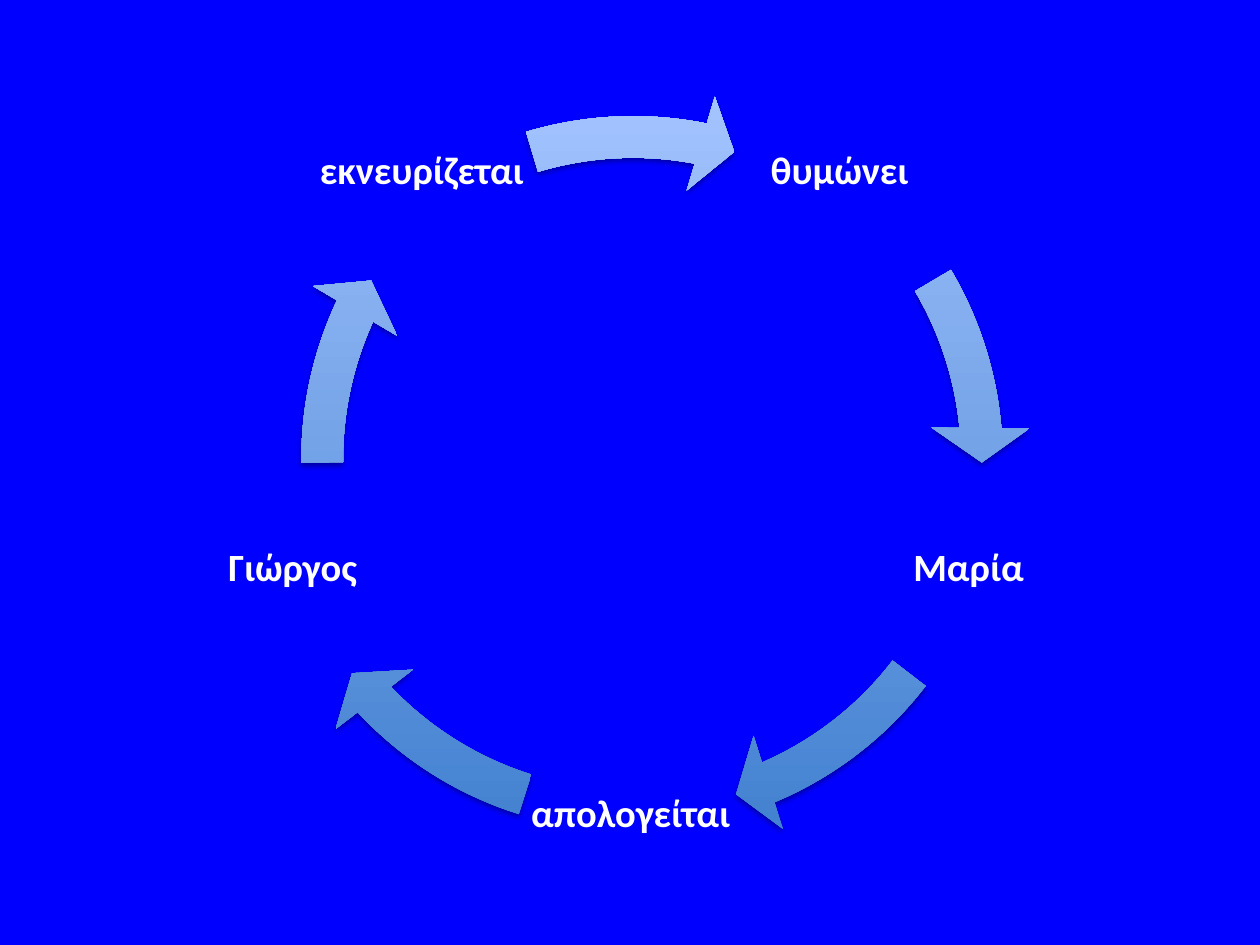
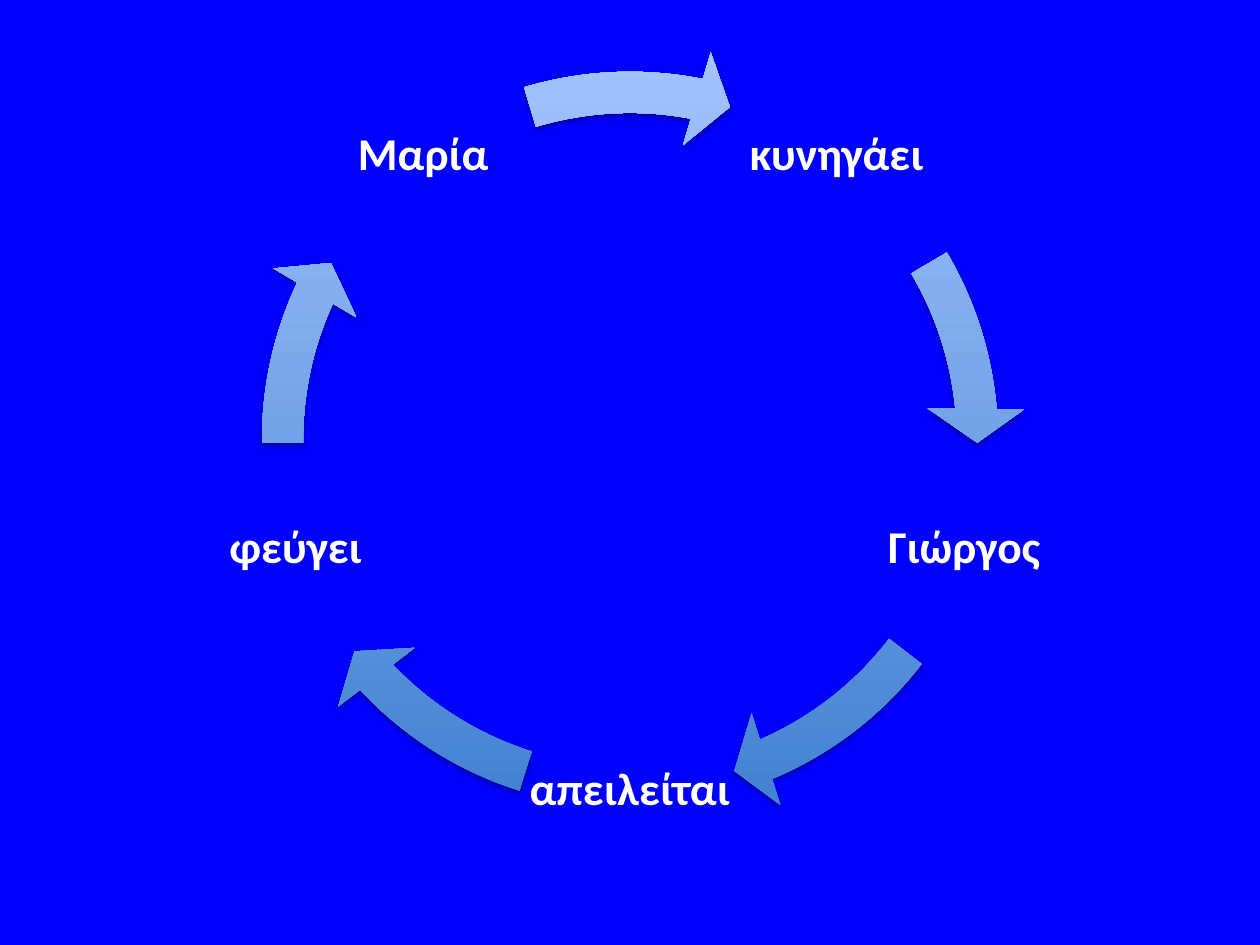
from math import cos, radians, sin

from lxml import etree
from pptx import Presentation
from pptx.dml.color import RGBColor
from pptx.enum.shapes import MSO_SHAPE
from pptx.enum.text import MSO_ANCHOR, PP_ALIGN
from pptx.oxml.ns import qn
from pptx.util import Pt

PX = 9144
BLUE = RGBColor(0x00, 0x00, 0xFF)
WHITE = RGBColor(0xFF, 0xFF, 0xFF)
DARK = RGBColor(0x3F, 0x7F, 0xCE)
LIGHT = RGBColor(0xA4, 0xC4, 0xFF)
FONT = "Calibri"
ARROW = MSO_SHAPE.CIRCULAR_ARROW
MIDDLE = MSO_ANCHOR.MIDDLE
CENTER = PP_ALIGN.CENTER
INSET = 3
FIRST, STEP = -54, 72
ARCS = [(329.42, 354.9), (37.54, 66.93), (107.48, 136.87),
        (179.5, 204.98), (253.29, 281.11)]

CYCLES = [
    dict(words=["θυμώνει", "Μαρία", "απολογείται", "Γιώργος", "εκνευρίζεται"],
         box=(183, 47, 635), radius=282, side=169, size=22,
         shifts={3: (34, 0), 4: (2, 23)}),
    dict(words=["κυνηγάει", "Γιώργος", "απειλείται", "φεύγει", "Μαρία"],
         box=(186, 35, 628), radius=279, side=167, size=26,
         shifts={}),
]


def place(*lengths):
    return [round(length * PX) for length in lengths]


def add_shade(shape):
    shape.shadow.inherit = False
    effects = shape.element.spPr.find(qn("a:effectLst"))
    shade = etree.SubElement(effects, qn("a:outerShdw"), blurRad="40000",
                             dist="23000", dir="5400000", rotWithShape="0")
    color = etree.SubElement(shade, qn("a:srgbClr"), val="000000")
    etree.SubElement(color, qn("a:alpha"), val="35000")


def add_word(group, word, x, y, side, size):
    box = group.shapes.add_textbox(*place(x - side / 2, y - side / 2, side, side))
    frame = box.text_frame
    frame.word_wrap = True
    frame.vertical_anchor = MIDDLE
    frame.margin_left = frame.margin_right = INSET * PX
    frame.margin_top = frame.margin_bottom = INSET * PX
    frame.text = word
    line = frame.paragraphs[0]
    line.alignment = CENTER
    line.line_spacing = 0.9
    line.space_after = Pt(size * 0.35)
    font = line.runs[0].font
    font.name = FONT
    font.size = Pt(size)
    font.bold = True
    font.color.rgb = WHITE


def add_arrow(group, left, top, span, start, end):
    arrow = group.shapes.add_shape(ARROW, *place(left, top, span, span))
    values = [5.2 / 100, 3.36, end * 0.6, start * 0.6, 6.1 / 100]
    for index, value in enumerate(values):
        arrow.adjustments[index] = value
    arrow.fill.gradient()
    arrow.fill.gradient_angle = 90
    for stop, color in zip(arrow.fill.gradient_stops, (DARK, LIGHT)):
        stop.color.rgb = color
    arrow.line.fill.background()
    add_shade(arrow)


def add_cycle(slide, words, box, radius, side, size, shifts):
    left, top, span = box
    group = slide.shapes.add_group_shape()
    for index, (word, arc) in enumerate(zip(words, ARCS)):
        angle = radians(FIRST + index * STEP)
        x = left + span / 2 + radius * cos(angle)
        y = top + span / 2 + radius * sin(angle)
        add_word(group, word, x, y, side, size)
        right, down = shifts.get(index, (0, 0))
        add_arrow(group, left + right, top + down, span, *arc)


def main():
    deck = Presentation()
    deck.slide_width, deck.slide_height = place(1000, 750)
    back = deck.slide_master.background.fill
    back.solid()
    back.fore_color.rgb = BLUE
    for cycle in CYCLES:
        add_cycle(deck.slides.add_slide(deck.slide_layouts[6]), **cycle)
    deck.save("out.pptx")


if __name__ == "__main__":
    main()
